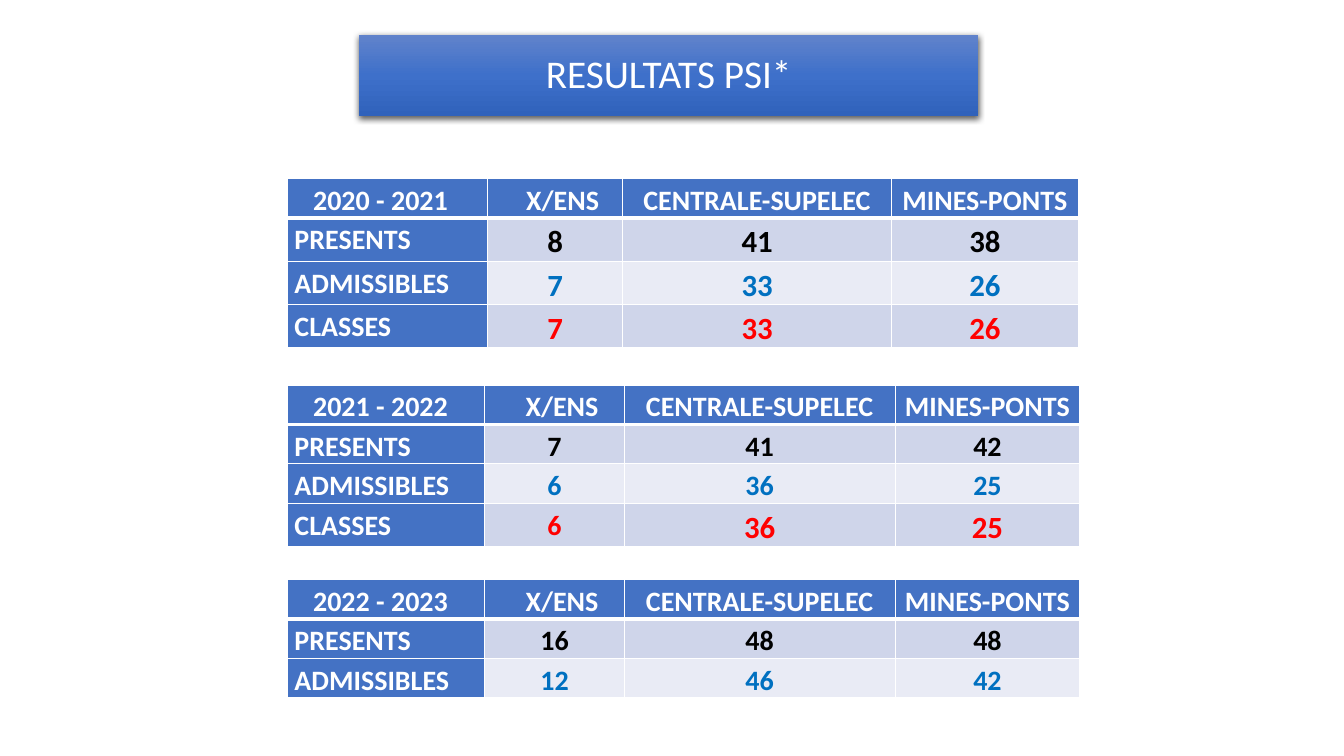
from dataclasses import dataclass

from pptx import Presentation
from pptx.dml.color import RGBColor
from pptx.enum.shapes import MSO_SHAPE
from pptx.enum.text import MSO_ANCHOR, PP_ALIGN
from pptx.oxml import parse_xml
from pptx.util import Cm, Pt

RECT = MSO_SHAPE.RECTANGLE
MIDDLE = MSO_ANCHOR.MIDDLE
LEFT, CENTER = PP_ALIGN.LEFT, PP_ALIGN.CENTER

FONT = "Calibri"
NS = 'xmlns:a="http://schemas.openxmlformats.org/drawingml/2006/main"'
WHITE, BLUE = "FFFFFF", "4472C4"
BANDS = ("CFD5EA", "E9EBF5")
ROW_COLORS = ("000000", "0070C0", "FF0000")
SCHOOLS = ("X/ENS", "CENTRALE-SUPELEC", "MINES-PONTS")
STAGES = ("PRESENTS", "ADMISSIBLES", "CLASSES")
TABLE_LEFT = 7.24
ROW_HEIGHT = {20: 0.99, 22: 1.09}
YEAR_INDENT, XENS_INDENT = 0.47, 0.38
COLS_FIRST = (5.05, 3.4, 6.78, 4.7)
COLS_NEXT = (4.98, 3.51, 6.83, 4.65)


@dataclass
class YearResults:
    year: str
    top: float
    cols: tuple[float, ...]
    counts: list[tuple[int, ...]]
    sizes: list[tuple[int, ...]]


PLAIN, LARGE = (20, 20, 20), (22, 22, 22)
YEARS = [
    YearResults("2020 - 2021", 4.5, COLS_FIRST,
                [(8, 41, 38), (7, 33, 26), (7, 33, 26)], [LARGE] * 3),
    YearResults("2021 - 2022", 9.7, COLS_NEXT,
                [(7, 41, 42), (6, 36, 25), (6, 36, 25)],
                [PLAIN, PLAIN, (20, 22, 22)]),
    YearResults("2022 - 2023", 14.6, COLS_NEXT,
                [(16, 48, 48), (12, 46, 42)], [PLAIN] * 2),
]


def rgb(color: str) -> RGBColor:
    return RGBColor.from_string(color)


def format_run(p, size: float, color: str, bold: bool) -> None:
    font = p.runs[0].font
    font.name, font.size, font.bold = FONT, Pt(size), bold
    font.color.rgb = rgb(color)


def add_borders(cell, top: float, bottom: float) -> None:
    """Draw white borders; must run before the cell gets its fill."""
    tc_pr = cell._tc.get_or_add_tcPr()
    for side, width in (("L", 1), ("R", 1), ("T", top), ("B", bottom)):
        tc_pr.append(parse_xml(
            f'<a:ln{side} {NS} w="{Pt(width)}"><a:solidFill>'
            f'<a:srgbClr val="{WHITE}"/></a:solidFill></a:ln{side}>'))


def fill_cell(cell, text: str, size: int, color: str, fill: str,
              align: PP_ALIGN, top: float = 1, bottom: float = 1) -> None:
    cell.margin_left = cell.margin_right = Cm(0.18)
    cell.margin_top = cell.margin_bottom = 0
    add_borders(cell, top, bottom)
    cell.fill.solid()
    cell.fill.fore_color.rgb = rgb(fill)
    p = cell.text_frame.paragraphs[0]
    p.text = text
    p.alignment, p.line_spacing, p.space_after = align, 1.15, Pt(10)
    format_run(p, size, color, True)


def indent_first_line(cell, indent: float) -> None:
    p_pr = cell.text_frame.paragraphs[0]._p.get_or_add_pPr()
    p_pr.set("marL", "0")
    p_pr.set("indent", str(Cm(indent)))


def add_results(s, results: YearResults) -> None:
    heights = [ROW_HEIGHT[20]] + [ROW_HEIGHT[max(row)] for row in results.sizes]
    table = s.shapes.add_table(
        len(heights), len(results.cols), Cm(TABLE_LEFT), Cm(results.top),
        Cm(sum(results.cols)), Cm(sum(heights))).table
    for col, width in zip(table.columns, results.cols):
        col.width = Cm(width)
    for row, height in zip(table.rows, heights):
        row.height = Cm(height)

    for c, text in enumerate((results.year, *SCHOOLS)):
        fill_cell(table.cell(0, c), text, 20, WHITE, BLUE,
                  CENTER if c else LEFT, bottom=3)
    indent_first_line(table.cell(0, 0), YEAR_INDENT)
    indent_first_line(table.cell(0, 1), XENS_INDENT)

    for r, (counts, sizes) in enumerate(zip(results.counts, results.sizes)):
        top = 1 if r else 3
        fill_cell(table.cell(r + 1, 0), STAGES[r], 20, WHITE, BLUE, LEFT, top)
        for c, (count, size) in enumerate(zip(counts, sizes), 1):
            fill_cell(table.cell(r + 1, c), str(count), size, ROW_COLORS[r],
                      BANDS[r % 2], CENTER, top)


def add_title(s, text: str) -> None:
    sp = s.shapes.add_shape(RECT, Cm(9.04), Cm(0.88), Cm(15.62), Cm(2.04))
    sp.line.fill.background()
    sp.shadow.inherit = False
    sp_pr = sp._element.spPr
    stops = "".join(
        f'<a:gs pos="{pos * 1000}"><a:srgbClr val="{color}"/></a:gs>'
        for pos, color in ((0, "6183CB"), (50, "3E70CA"), (100, "3062BB")))
    sp_pr.insert(2, parse_xml(
        f'<a:gradFill {NS} rotWithShape="1"><a:gsLst>{stops}</a:gsLst>'
        '<a:lin ang="5400000" scaled="0"/></a:gradFill>'))
    sp_pr[-1].append(parse_xml(
        f'<a:outerShdw {NS} blurRad="{Pt(4.5)}" dist="{Pt(1.5)}" '
        'dir="5400000" algn="ctr" rotWithShape="0"><a:srgbClr val="000000">'
        '<a:alpha val="63000"/></a:srgbClr></a:outerShdw>'))
    tf = sp.text_frame
    tf.text = text
    tf.word_wrap, tf.vertical_anchor = True, MIDDLE
    p = tf.paragraphs[0]
    p.alignment, p.line_spacing = CENTER, 0.9
    format_run(p, 28, WHITE, False)


def main() -> None:
    prs = Presentation()
    prs.slide_width, prs.slide_height = Cm(33.87), Cm(19.05)
    s = prs.slides.add_slide(prs.slide_layouts[6])
    add_title(s, "RESULTATS PSI*")
    for results in YEARS:
        add_results(s, results)
    prs.save("out.pptx")


if __name__ == "__main__":
    main()
